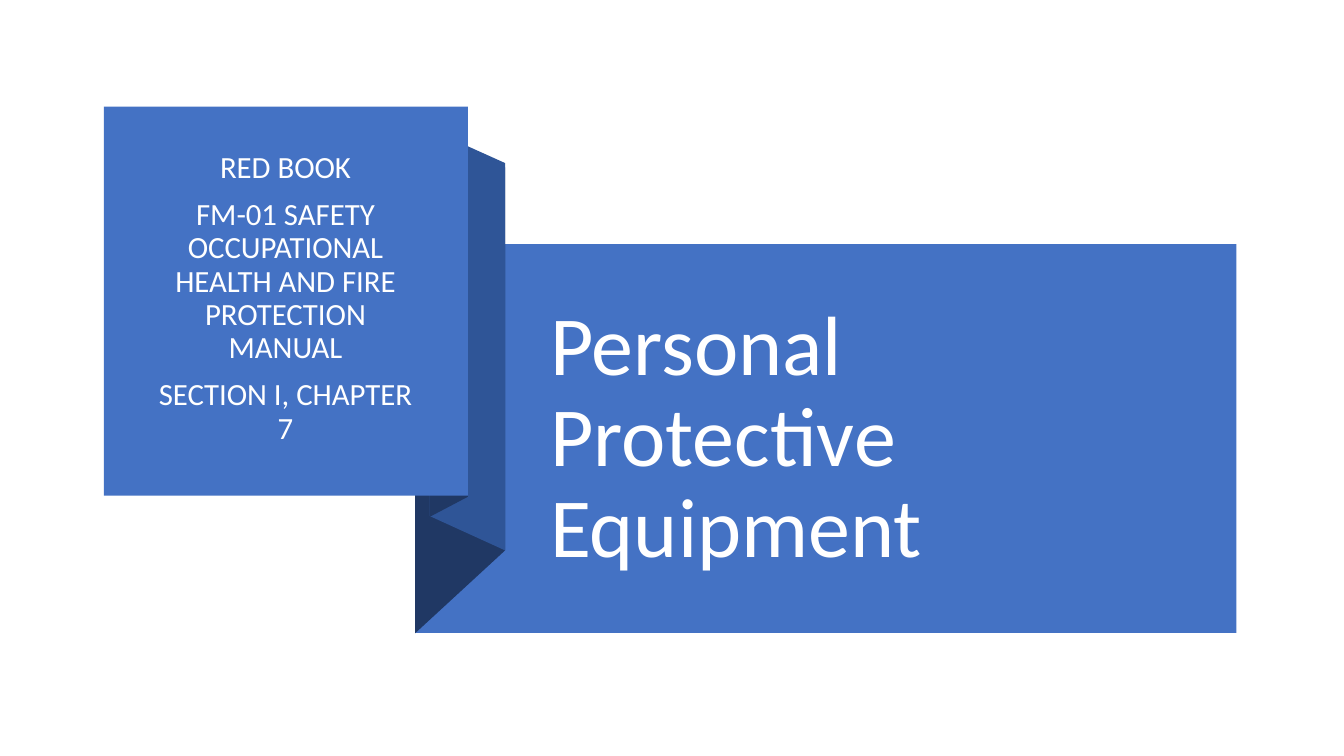
from pptx import Presentation
from pptx.dml.color import RGBColor
from pptx.enum import shapes, text
from pptx.util import Cm, Pt

BLUE = RGBColor(0x44, 0x72, 0xC4)
MID = RGBColor(0x2F, 0x55, 0x97)
DARK = RGBColor(0x20, 0x38, 0x64)
WHITE = RGBColor(0xFF, 0xFF, 0xFF)

deck = Presentation()
deck.slide_width, deck.slide_height = Cm(33.87), Cm(19.05)
slide = deck.slides.add_slide(deck.slide_layouts[0])
tree = slide.shapes
title, sub = slide.placeholders


def paint(shape, color):
    shape.shadow.inherit = False
    shape.fill.solid()
    shape.fill.fore_color.rgb = color
    shape.line.fill.background()


def write(holder, box, lines, size, align, gap):
    """Place a placeholder in front of the shapes so far and fill it."""
    holder.left, holder.top, holder.width, holder.height = map(Cm, box)
    tree._spTree.append(holder._element)
    frame = holder.text_frame
    frame.text = "\n".join(lines)
    frame.word_wrap = True
    frame.auto_size = text.MSO_AUTO_SIZE.NONE
    frame.vertical_anchor = text.MSO_ANCHOR.MIDDLE
    for i, para in enumerate(frame.paragraphs):
        para.alignment = align
        para.line_spacing = 0.9
        para.space_before = Pt(gap if i else 0)
        for run in para.runs:
            run.font.name = "Calibri"
            run.font.size = Pt(size)
            run.font.color.rgb = WHITE


# Banner with the title
RECT = shapes.MSO_SHAPE.RECTANGLE
banner = tree.add_shape(RECT, Cm(10.46), Cm(6.15), Cm(20.7), Cm(9.8))
paint(banner, BLUE)
write(title, (13.61, 7.14, 16.33, 7.85), ["Personal Protective Equipment"],
      60, text.PP_ALIGN.LEFT, 0)

# Ribbon folds, from back to front
folds = [
    (DARK, [(12.73, 13.87), (10.46, 15.96), (10.46, 6.3), (12.73, 4.22)]),
    (MID, [(12.73, 13.87), (10.82, 13), (10.82, 3.25), (12.73, 4.11)]),
    (DARK, [(11.79, 12.52), (10.82, 13.03), (10.82, 3.23), (11.79, 2.74)]),
]
for color, points in folds:
    start, *rest = [(Cm(x), Cm(y)) for x, y in points]
    pen = tree.build_freeform(*start)
    pen.add_line_segments(rest, close=True)
    paint(pen.convert_to_shape(), color)

# Card with the source manual
card = tree.add_shape(RECT, Cm(2.62), Cm(2.69), Cm(9.17), Cm(9.8))
paint(card, BLUE)
write(sub, (3.51, 3.58, 7.37, 7.9),
      ["RED BOOK",
       "FM-01 SAFETY OCCUPATIONAL HEALTH AND FIRE PROTECTION MANUAL",
       "SECTION I, CHAPTER 7"],
      22, text.PP_ALIGN.CENTER, 10)

deck.save("out.pptx")
